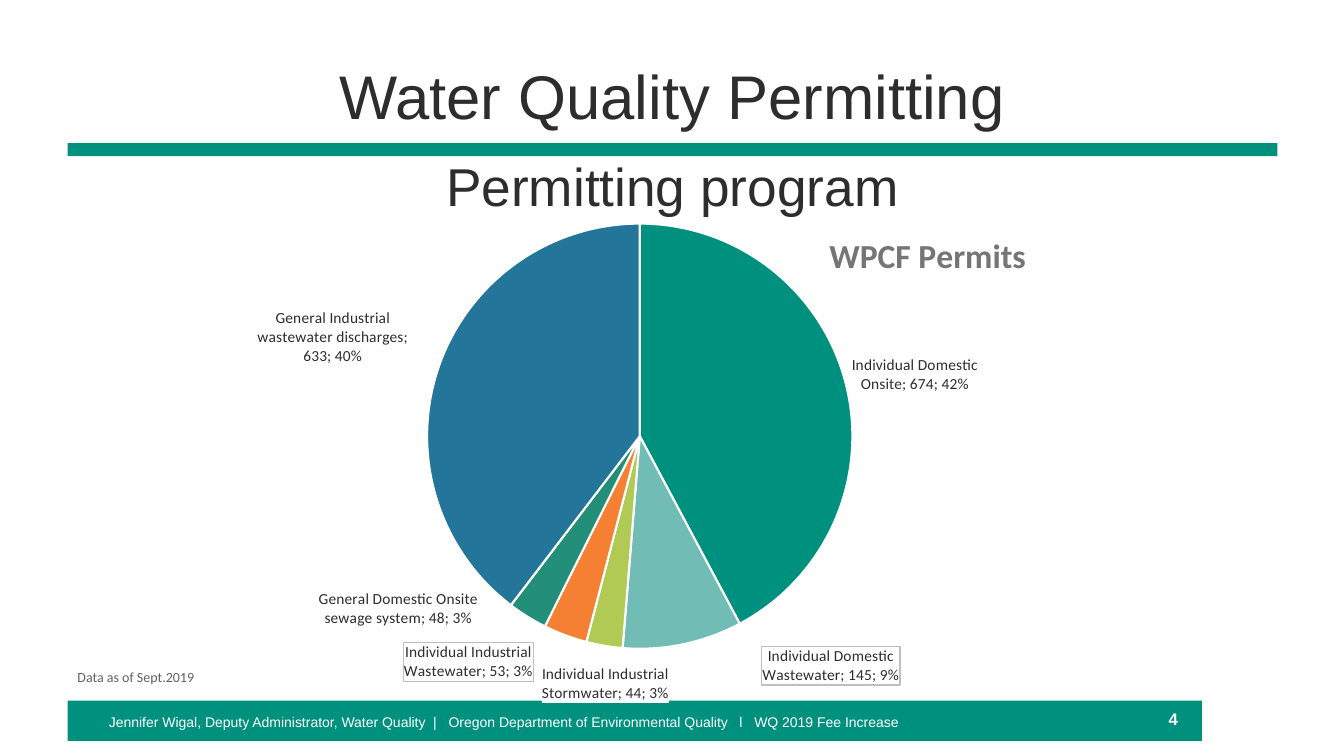
from lxml import etree
from pptx import Presentation
from pptx.chart.data import CategoryChartData
from pptx.dml.color import RGBColor
from pptx.enum.chart import XL_CHART_TYPE, XL_LABEL_POSITION
from pptx.enum.shapes import MSO_SHAPE
from pptx.enum.text import MSO_ANCHOR, PP_ALIGN
from pptx.oxml import parse_xml
from pptx.oxml.ns import nsdecls, qn
from pptx.util import Inches, Pt

PIE = XL_CHART_TYPE.PIE
OUTSIDE = XL_LABEL_POSITION.OUTSIDE_END
RECTANGLE = MSO_SHAPE.RECTANGLE
TOP, MIDDLE = MSO_ANCHOR.TOP, MSO_ANCHOR.MIDDLE
LEFT, CENTER, RIGHT = PP_ALIGN.LEFT, PP_ALIGN.CENTER, PP_ALIGN.RIGHT

COLORS = {
    "green": "00907E", "ink": "2D2D2D", "note": "626262", "heading": "757575",
    "white": "FFFFFF", "label_border": "BFBFBF",
}

# Permit type, count, slice colour, label shift (share of chart), label box
PERMITS = [
    ("Individual Domestic Onsite", 674, "00907E", (0, 0.021), None),
    ("Individual Domestic Wastewater", 145, "71BCB4", (0.089, -0.008), "border"),
    ("Individual Industrial Stormwater", 44, "B1CA54", (0.075, 0.027), "plain"),
    ("Individual Industrial Wastewater", 53, "F57F32", (-0.034, 0.004), "border"),
    ("General Domestic Onsite sewage system", 48, "248F79", (-0.053, -0.064), None),
    ("General Industrial wastewater discharges", 633, "23769A", (-0.028, -0.002), None),
]

# Text and letter spacing in points; the spaced blanks set off the dividers
FOOTER = [
    ("Jennifer Wigal, Deputy Administrator, Water Quality", 0),
    (" ", 2.8), ("|", 0), (" ", 5.6),
    ("Oregon Department of Environmental Quality", 0),
    (" ", 5.6), ("l", 0), (" ", 5.6),
    ("WQ 2019 Fee Increase", 0),
]


def rgb(name):
    return RGBColor.from_string(COLORS[name])


def style_font(font, size, color, family, bold=False):
    font.size, font.name, font.bold = Pt(size), family, bold
    font.color.rgb = rgb(color)


def write(shape, text, *, size, color, family="Arial", bold=False,
          align=LEFT, anchor=TOP, inset=0.1):
    """Put one paragraph in a shape; text is a string or (text, spacing) pairs."""
    frame = shape.text_frame
    frame.word_wrap = True
    frame.vertical_anchor = anchor
    frame.margin_left = Inches(inset)
    paragraph = frame.paragraphs[0]
    paragraph.alignment = align
    paragraph.space_before = Pt(0)
    properties = paragraph._p.get_or_add_pPr()
    properties.set("marL", "0")
    properties.set("indent", "0")
    etree.SubElement(properties, qn("a:buNone"))
    for words, spacing in [(text, 0)] if isinstance(text, str) else text:
        run = paragraph.add_run()
        run.text = words
        style_font(run.font, size, color, family, bold)
        if spacing:
            run._r.get_or_add_rPr().set("spc", str(round(spacing * 100)))


def place(shape, left, top, width, height):
    shape.left, shape.top = Inches(left), Inches(top)
    shape.width, shape.height = Inches(width), Inches(height)


def add_text(slide, box, text, **style):
    write(slide.shapes.add_textbox(*map(Inches, box)), text, **style)


def add_bar(slide, *box):
    bar = slide.shapes.add_shape(RECTANGLE, *map(Inches, box))
    bar.shadow.inherit = False
    bar.fill.solid()
    bar.fill.fore_color.rgb = rgb("green")
    bar.line.fill.background()


def set_layout(parent, index, **values):
    """Give a chart part a manual layout as child number index."""
    for old in parent.findall(qn("c:layout")):
        parent.remove(old)
    layout = parse_xml(f"<c:layout {nsdecls('c')}><c:manualLayout/></c:layout>")
    for tag, value in values.items():
        etree.SubElement(layout[0], qn(f"c:{tag}"), val=str(value))
    parent.insert(index, layout)


def show_all(labels):
    """Show category, value and percentage, divided by semicolons."""
    for tag in ("showCatName", "showVal", "showPercent"):
        labels.find(qn(f"c:{tag}")).set("val", "1")
    separator = parse_xml(f"<c:separator {nsdecls('c')}>; </c:separator>")
    labels.find(qn("c:showBubbleSize")).addnext(separator)


def label_box(kind):
    line = "<a:noFill/>"
    if kind == "border":
        line = f'<a:solidFill><a:srgbClr val="{COLORS["label_border"]}"/></a:solidFill>'
    return parse_xml(
        f'<c:spPr {nsdecls("c", "a")}><a:solidFill><a:srgbClr val="{COLORS["white"]}"/>'
        f'</a:solidFill><a:ln w="9525">{line}</a:ln></c:spPr>')


def format_slices(series):
    labels = series.data_labels
    labels.position = OUTSIDE
    style_font(labels.font, 11, "ink", "Calibri")
    for index, (_, _, color, _, _) in enumerate(PERMITS):
        point = series.points[index]
        point.format.fill.solid()
        point.format.fill.fore_color.rgb = RGBColor.from_string(color)
        point.format.line.color.rgb = rgb("white")
        point.format.line.width = Pt(1.5)
        style_font(point.data_label.font, 11, "ink", "Calibri")
        point.data_label.position = OUTSIDE
    group = series._element.find(qn("c:dLbls"))
    for label, (_, _, _, (x, y), box) in zip(group.findall(qn("c:dLbl")), PERMITS):
        set_layout(label, 1, x=x, y=y)
        if box:
            for old in label.findall(qn("c:spPr")):
                label.remove(old)
            label.insert(2, label_box(box))
        show_all(label)
    show_all(group)
    for leader in group.findall(qn("c:showLeaderLines")):
        leader.set("val", "0")


def add_permit_chart(slide):
    data = CategoryChartData()
    data.categories = [permit[0] for permit in PERMITS]
    data.add_series("Series 1", [permit[1] for permit in PERMITS])
    box = map(Inches, (2.08, 2.1, 8.67, 4.94))
    chart = slide.shapes.add_chart(PIE, *box, data).chart
    style_font(chart.font, 10, "ink", "Calibri")
    chart.has_legend = False
    chart.has_title = True
    title = chart.chart_title
    title.text_frame.text = "WPCF Permits"
    style_font(title.text_frame.paragraphs[0].runs[0].font,
               24, "heading", "Calibri", bold=True)
    title.include_in_layout = True
    set_layout(title._element, 1, xMode="edge", yMode="edge", x=0.702, y=0.03)
    plot_area = chart._chartSpace.find(".//" + qn("c:plotArea"))
    set_layout(plot_area, 0, layoutTarget="inner", xMode="edge", yMode="edge",
               x=0.16, y=0.024, w=0.664, h=0.854)
    chart.plots[0].vary_by_categories = True
    format_slices(chart.plots[0].series[0])


def main():
    deck = Presentation()
    deck.slide_width, deck.slide_height = Inches(13.33), Inches(7.5)
    slide = deck.slides.add_slide(deck.slide_layouts[1])
    title, subtitle = slide.placeholders
    add_bar(slide, 0.67, 1.42, 12, 0.13)
    add_bar(slide, 0.67, 6.95, 11.25, 0.4)
    place(title, 0.67, 0.33, 12, 1.22)
    write(title, "Water Quality Permitting", size=44, color="ink",
          align=CENTER, anchor=MIDDLE)
    place(subtitle, 0.67, 1.47, 12, 4.95)
    write(subtitle, "Permitting program", size=38, color="ink", align=CENTER)
    add_text(slide, (8.67, 6.93, 3.11, 0.4), "4", size=12, color="white",
             bold=True, align=RIGHT, anchor=MIDDLE)
    add_text(slide, (0.67, 6.58, 2.25, 0.27), "Data as of Sept.2019",
             size=10, color="note", family="Calibri")
    add_text(slide, (0.83, 7, 10.92, 0.33), FOOTER,
             size=10, color="white", anchor=MIDDLE, inset=0.25)
    add_permit_chart(slide)
    deck.save("out.pptx")


if __name__ == "__main__":
    main()
